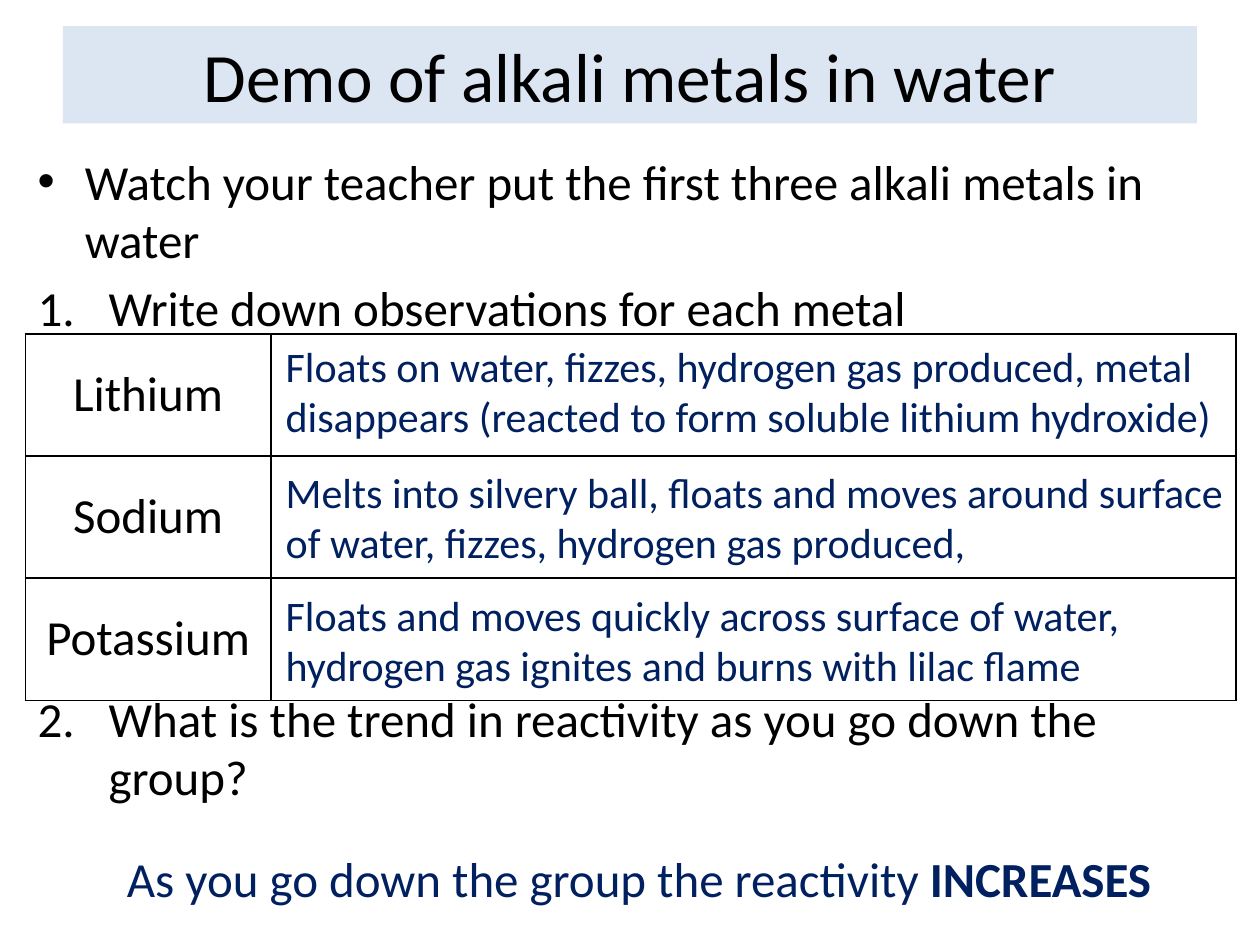
from lxml.etree import SubElement
from pptx import Presentation
from pptx.dml.color import RGBColor
from pptx.enum.shapes import MSO_SHAPE as Shape
from pptx.enum.text import MSO_ANCHOR as Anchor, PP_ALIGN as Align
from pptx.oxml.ns import qn
from pptx.util import Cm, Pt

BLACK = RGBColor(0x00, 0x00, 0x00)
NAVY = RGBColor(0x00, 0x20, 0x60)
PALE_BLUE = RGBColor(0xDC, 0xE6, 0xF2)

BODY = {"name": "Calibri", "size": Pt(28)}
TITLE = {**BODY, "size": Pt(39.6)}
OBSERVATION = {**BODY, "size": Pt(24)}

METALS = [
    ("Lithium", 6.73, "Floats on water, fizzes, hydrogen gas produced, metal "
     "disappears (reacted to form soluble lithium hydroxide)"),
    ("Sodium", 9.27, "Melts into silvery ball, floats and moves around surface "
     "of water, fizzes, hydrogen gas produced,"),
    ("Potassium", 11.76, "Floats and moves quickly across surface of water, "
     "hydrogen gas ignites and burns with lilac flame"),
]
# text, indent in cm, space before in points, marker tag, marker attributes
# The large space before the last question leaves room for the table.
TASKS = [
    ("Watch your teacher put the first three alkali metals in water",
     0.95, 5, "a:buChar", {"char": "•"}),
    ("Write down observations for each metal",
     1.43, 5, "a:buAutoNum", {"type": "arabicPeriod"}),
    ("What is the trend in reactivity as you go down the group?",
     1.43, 201, "a:buAutoNum", {"type": "arabicPeriod", "startAt": "2"}),
]


def add_span(para, text, style, color, bold=False):
    span = para.add_run()
    span.text = text
    for key, value in {**style, "bold": bold}.items():
        setattr(span.font, key, value)
    span.font.color.rgb = color


def add_box(page, left, top, width, height):
    box = page.shapes.add_textbox(Cm(left), Cm(top), Cm(width), Cm(height))
    box.text_frame.word_wrap = True
    return box.text_frame


def add_title(page, text):
    box = page.shapes.add_shape(Shape.RECTANGLE, Cm(1.27), Cm(0.53), Cm(22.86), Cm(1.96))
    box.shadow.inherit = False
    box.fill.solid()
    box.fill.fore_color.rgb = PALE_BLUE
    box.line.fill.background()
    box.text_frame.vertical_anchor = Anchor.MIDDLE
    para = box.text_frame.paragraphs[0]
    para.alignment = Align.CENTER
    add_span(para, text, TITLE, BLACK)


def add_tasks(page):
    frame = add_box(page, 0.51, 2.92, 24.61, 15.6)
    for index, (text, indent, space, marker, attributes) in enumerate(TASKS):
        para = frame.add_paragraph() if index else frame.paragraphs[0]
        para.space_before = Pt(space)
        add_span(para, text, BODY, BLACK)
        properties = para._p.get_or_add_pPr()
        properties.set("marL", str(Cm(indent)))
        properties.set("indent", str(-Cm(indent)))
        SubElement(properties, qn("a:buFont"), typeface="Arial")
        SubElement(properties, qn(marker), attributes)


def add_borders(cell):
    properties = cell._tc.get_or_add_tcPr()
    for side in ("a:lnL", "a:lnR", "a:lnT", "a:lnB"):
        line = SubElement(properties, qn(side), w=str(Pt(1)))
        fill = SubElement(line, qn("a:solidFill"))
        SubElement(fill, qn("a:srgbClr"), val=str(BLACK))


def add_metal_table(page):
    table = page.shapes.add_table(
        len(METALS), 2, Cm(0.51), Cm(6.73), Cm(24.41), Cm(7.39)).table
    table.first_row = table.horz_banding = False
    for column, width in zip(table.columns, (4.95, 19.46)):
        column.width = Cm(width)
    for cell in table.iter_cells():
        add_borders(cell)
        cell.fill.background()
    for row, (metal, _, _) in enumerate(METALS):
        cell = table.cell(row, 0)
        cell.vertical_anchor = Anchor.MIDDLE
        para = cell.text_frame.paragraphs[0]
        para.alignment = Align.CENTER
        add_span(para, metal, BODY, BLACK)


def add_observations(page):
    for _, top, text in METALS:
        frame = add_box(page, 5.51, top, 19.41, 2.31)
        add_span(frame.paragraphs[0], text, OBSERVATION, NAVY)


def add_conclusion(page):
    para = add_box(page, 2.31, 16.99, 21.51, 1.45).paragraphs[0]
    add_span(para, "As you go down the group the reactivity ", BODY, NAVY)
    add_span(para, "INCREASES", BODY, NAVY, bold=True)


def main():
    deck = Presentation()
    deck.slide_width, deck.slide_height = Cm(25.4), Cm(19.05)
    page = deck.slides.add_slide(deck.slide_layouts[6])
    add_title(page, "Demo of alkali metals in water")
    add_tasks(page)
    add_metal_table(page)
    add_observations(page)
    add_conclusion(page)
    deck.save("out.pptx")


if __name__ == "__main__":
    main()
